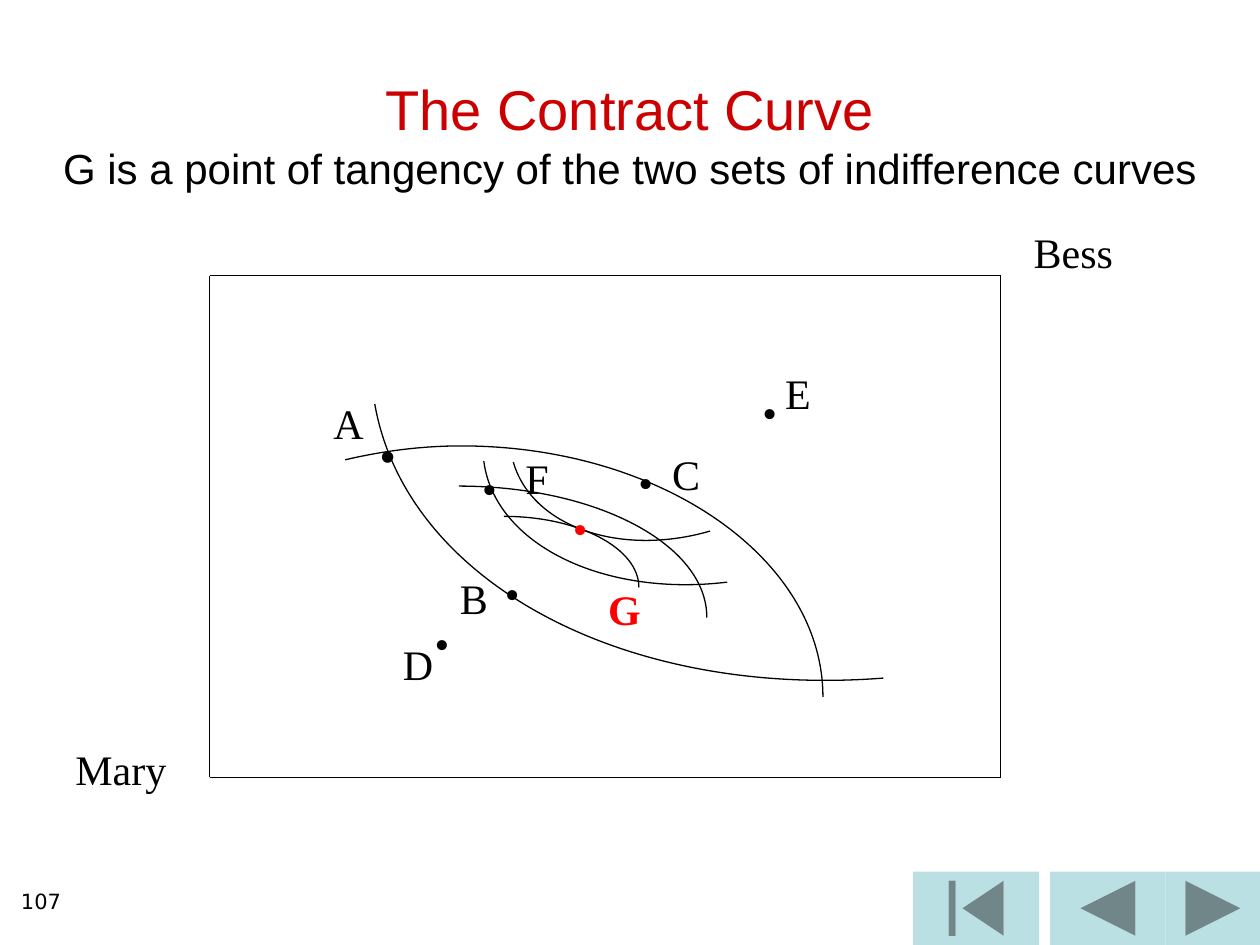
import copy

import lxml.etree
import pptx
import pptx.dml.color
import pptx.enum.shapes
import pptx.enum.text
import pptx.oxml
import pptx.oxml.ns
import pptx.util
from pptx.util import Cm

BLACK = pptx.dml.color.RGBColor(0x00, 0x00, 0x00)
RED = pptx.dml.color.RGBColor(0xFF, 0x00, 0x00)
TITLE_RED = pptx.dml.color.RGBColor(0xCC, 0x00, 0x00)
BUTTON_BLUE = pptx.dml.color.RGBColor(0xBB, 0xE0, 0xE3)

SERIF = "Times New Roman"
SANS = "Arial"
LABEL_HEIGHT = 1.27
BUTTON_TOP, BUTTON_HEIGHT = 17.57, 1.48

BOX_LEFT, BOX_TOP, BOX_RIGHT, BOX_BOTTOM = 4.23, 5.56, 20.17, 15.67

# Bezier points (start, then three a segment), corner closing the sector, rotation
OUTER_CURVES = [
    ([(6.96, 9.27), (7.72, 9.09), (8.51, 8.99), (9.3, 8.99),
      (13.31, 8.99), (16.59, 11.25), (16.59, 14.05)], (9.3, 14.05), 0),
    ([(9.68, 7.16), (14.94, 7.67), (18.82, 10.77), (18.82, 14.38)], (8.1, 14.38), 170),
]
MIDDLE_CURVES = [
    ([(9.25, 9.8), (12.01, 9.8), (14.25, 10.97), (14.25, 12.45)], (9.25, 12.45), 0),
    ([(9.95, 8.99), (12.46, 9.01), (14.5, 10.35), (14.5, 12.04)], (9.93, 12.04), 172.6),
]
INNER_CURVES = [
    ([(10.16, 10.41), (11.66, 10.41), (12.88, 11.05), (12.88, 11.84)], (10.16, 11.84), 0),
    ([(10.63, 8.79), (12.51, 8.79), (14.05, 9.87), (14.05, 11.23)], (10.62, 11.23), 163.8),
]

# Text, left, top, width, wrap
AXIS_LABELS = [("Mary", 1.27, 14.86, 3.84, True), ("Bess", 20.59, 4.45, 2.13, False)]
OUTER_LABELS = [
    ("A", 6.47, 7.89, 1.12, False),
    ("•", 9.93, 11.31, 1.14, True),
    ("•", 12.62, 9.08, 0.89, False),
    ("B", 9.02, 11.42, 1.14, True),
    ("C", 13.3, 8.91, 1.07, False),
    ("D", 7.87, 12.75, 0.71, True),
    ("E", 15.58, 7.29, 1.02, False),
]
MIDDLE_LABELS = [("•", 9.47, 9.19, 0.69, True), ("F", 10.34, 8.99, 1.07, True)]
INNER_LABELS = [
    ("•", 11.3, 10.01, 1.14, True, SERIF, RED),
    ("•", 7.42, 8.53, 1.14, True, SANS),
    ("•", 8.51, 12.32, 0.89, False),
    ("•", 15.12, 7.67, 0.89, False),
    ("G", 12.01, 11.64, 0.79, True, SERIF, RED, True),
]


def add_run(paragraph, text, size, font_name, color, bold=False):
    run = paragraph.add_run()
    run.text = text
    run.font.size = pptx.util.Pt(size)
    run.font.name = font_name
    run.font.color.rgb = color
    run.font.bold = bold


def add_text_frame(slide, left, top, width, height, wrap=True):
    frame = slide.shapes.add_textbox(Cm(left), Cm(top), Cm(width), Cm(height)).text_frame
    frame.word_wrap = wrap
    return frame


def add_label(slide, text, left, top, width, wrap, font_name=SERIF, color=BLACK, bold=False):
    frame = add_text_frame(slide, left, top, width, LABEL_HEIGHT, wrap)
    frame.auto_size = pptx.enum.text.MSO_AUTO_SIZE.SHAPE_TO_FIT_TEXT
    add_run(frame.paragraphs[0], text, 24, font_name, color, bold)


def add_heading(slide):
    frame = add_text_frame(slide, 0, 0, 25.4, 4.01)
    frame.vertical_anchor = pptx.enum.text.MSO_ANCHOR.BOTTOM
    frame.margin_bottom = Cm(0.13)
    heading = frame.paragraphs[0]
    heading.alignment = pptx.enum.text.PP_ALIGN.CENTER
    add_run(heading, "The Contract Curve", 32, SANS, TITLE_RED)
    heading.add_line_break()
    add_run(heading, "G is a point of tangency of the two sets of indifference curves",
            24, SANS, BLACK)


def add_slide_number(slide):
    paragraph = add_text_frame(slide, 0, 17.78, 1.48, LABEL_HEIGHT).paragraphs[0]
    paragraph.alignment = pptx.enum.text.PP_ALIGN.RIGHT
    add_run(paragraph, "107", 12, "DejaVu Sans", BLACK)


def add_button(slide, kind, left, width):
    button = slide.shapes.add_shape(kind, Cm(left), Cm(BUTTON_TOP), Cm(width), Cm(BUTTON_HEIGHT))
    button.shadow.inherit = False
    button.fill.solid()
    button.fill.fore_color.rgb = BUTTON_BLUE
    button.line.fill.background()


def style_outline(line):
    line.color.rgb = BLACK
    line.width = pptx.util.Pt(0.75)


def add_edge(slide, start, end):
    edge = slide.shapes.add_connector(
        pptx.enum.shapes.MSO_CONNECTOR.STRAIGHT,
        Cm(start[0]), Cm(start[1]), Cm(end[0]), Cm(end[1]))
    style_outline(edge.line)
    edge._element.spPr.append(pptx.oxml.parse_xml(
        '<a:effectLst xmlns:a="http://schemas.openxmlformats.org/drawingml/2006/main"/>'))


def bend_segments(outline, count):
    """Turn the first count line segments into cubic Beziers, three points each."""
    lines = outline.findall(pptx.oxml.ns.qn("a:lnTo"))[:count]
    for first in range(0, count, 3):
        bezier = lxml.etree.Element(pptx.oxml.ns.qn("a:cubicBezTo"))
        lines[first].addprevious(bezier)
        for line in lines[first:first + 3]:
            bezier.append(line[0])
            outline.remove(line)


def add_indifference_curve(slide, points, corner, rotation):
    """Draw a stroked arc and the unstroked sector that sets its extent."""
    start, *bends = [(Cm(x), Cm(y)) for x, y in points + [corner]]
    builder = slide.shapes.build_freeform(*start)
    builder.add_line_segments(bends, close=True)
    curve = builder.convert_to_shape()
    curve.rotation = rotation
    curve.shadow.inherit = False
    curve.fill.background()
    style_outline(curve.line)

    sector = next(curve._element.iter(pptx.oxml.ns.qn("a:path")))
    bend_segments(sector, len(points) - 1)
    arc = copy.deepcopy(sector)
    for tag in ("a:lnTo", "a:close"):
        for part in arc.findall(pptx.oxml.ns.qn(tag)):
            arc.remove(part)
    arc.set("fill", "none")
    sector.set("stroke", "0")
    sector.addprevious(arc)


def main():
    presentation = pptx.Presentation()
    presentation.slide_width, presentation.slide_height = Cm(25.4), Cm(19.05)
    slide = presentation.slides.add_slide(presentation.slide_layouts[6])

    button_kinds = pptx.enum.shapes.MSO_SHAPE
    add_button(slide, button_kinds.ACTION_BUTTON_BACK_OR_PREVIOUS, 21.17, 2.33)
    add_button(slide, button_kinds.ACTION_BUTTON_BEGINNING, 18.41, 2.54)
    add_button(slide, button_kinds.ACTION_BUTTON_FORWARD_OR_NEXT, 23.5, 1.9)
    add_heading(slide)

    bottom_left, bottom_right = (BOX_LEFT, BOX_BOTTOM), (BOX_RIGHT, BOX_BOTTOM)
    top_left, top_right = (BOX_LEFT, BOX_TOP), (BOX_RIGHT, BOX_TOP)
    for start, end in ((bottom_left, bottom_right), (bottom_right, top_right),
                       (top_right, top_left), (bottom_left, top_left)):
        add_edge(slide, start, end)

    for label in AXIS_LABELS:
        add_label(slide, *label)
    for curves, labels in ((OUTER_CURVES, OUTER_LABELS), (MIDDLE_CURVES, MIDDLE_LABELS),
                           (INNER_CURVES, INNER_LABELS)):
        for curve in curves:
            add_indifference_curve(slide, *curve)
        for label in labels:
            add_label(slide, *label)
    add_slide_number(slide)
    presentation.save("out.pptx")


if __name__ == "__main__":
    main()
